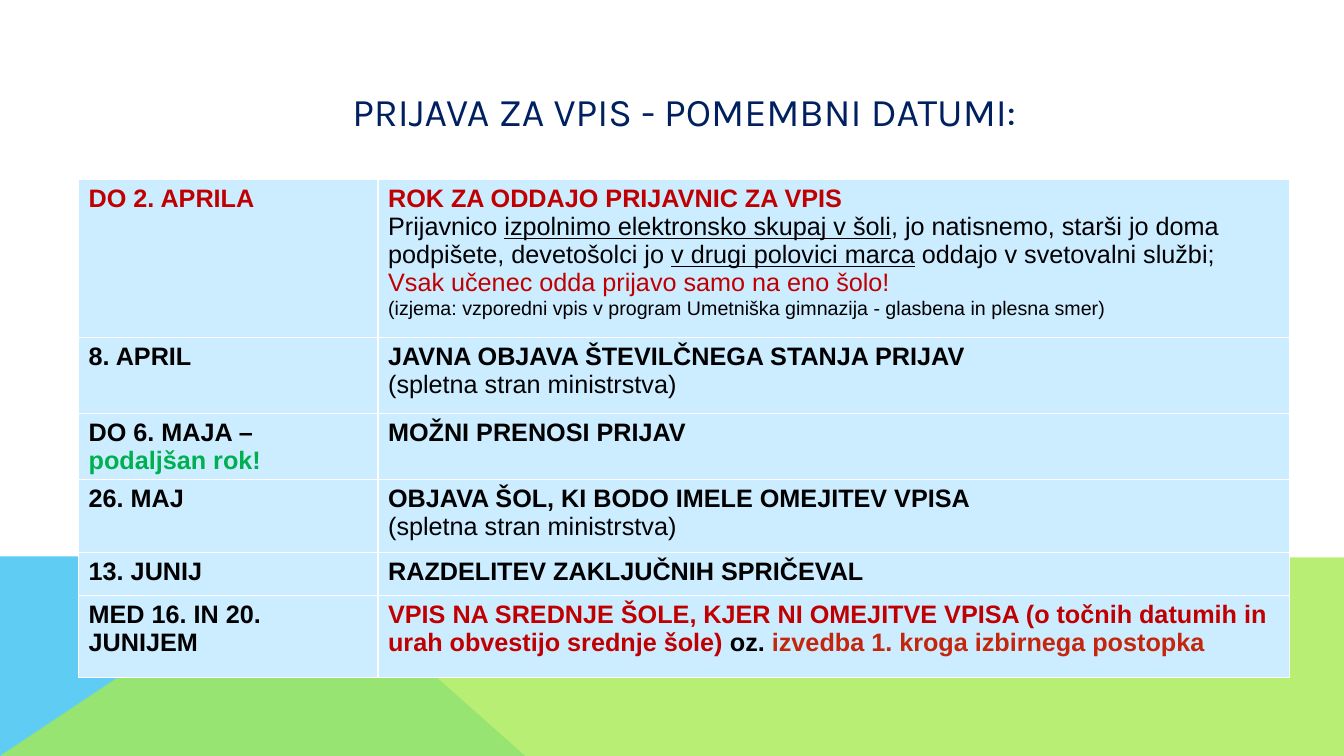
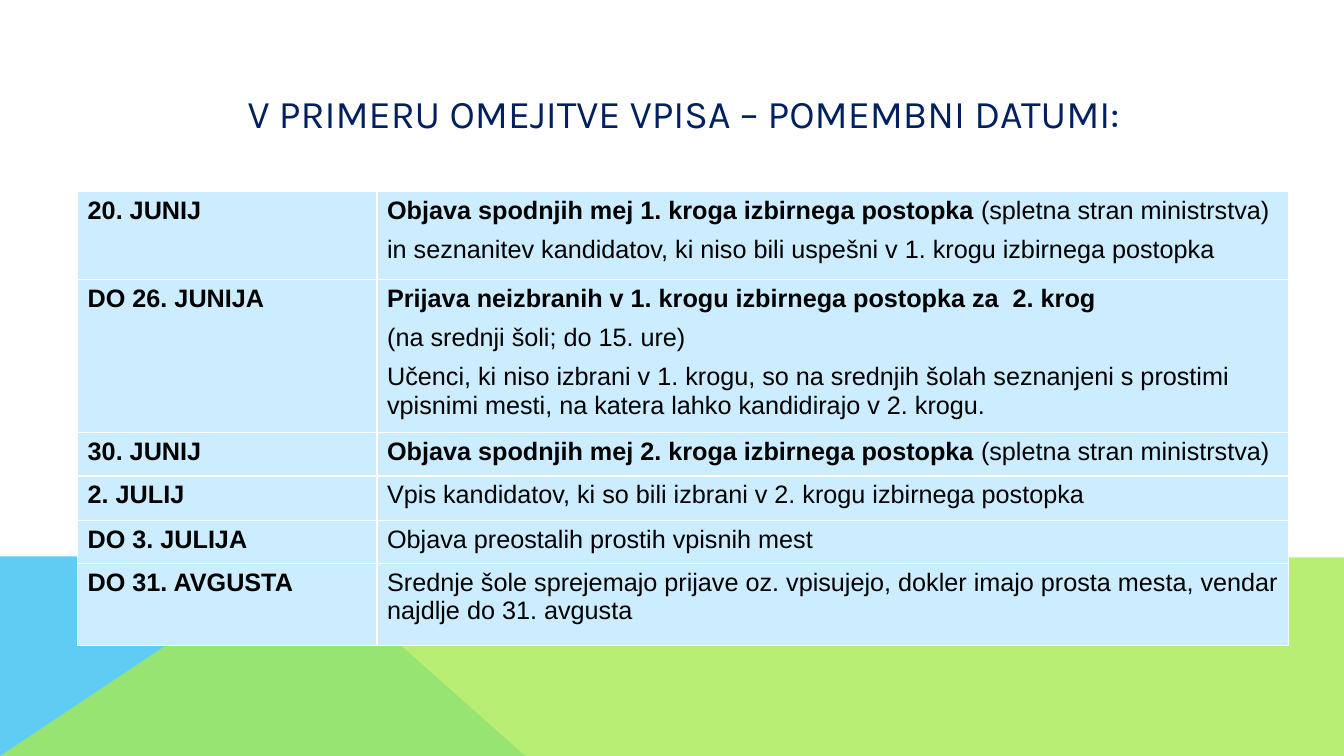
import pptx
import pptx.dml.color
import pptx.enum.text
import pptx.oxml
import pptx.oxml.ns
import pptx.util
from dataclasses import dataclass


@dataclass(frozen=True)
class Theme:
    navy: str = "002060"
    black: str = "000000"
    red: str = "C00000"
    brick: str = "C3260C"
    green: str = "00B050"
    cell: str = "CCECFF"
    border: str = "FFFFFF"
    sky: str = "5ECCF3"
    lime: str = "A7EA52"
    title_font: str = "Karla"
    body_font: str = "Arial"
    title_size: int = 28
    body_size: int = 18
    note_size: int = 14


THEME = Theme()
PX = 9144
SLIDE_SIZE = (1333, 750)
COLUMNS = (297, 904)

PLAIN = {}
BOLD = {"bold": True}
UNDERLINED = {"underline": True}
RED = {"color": THEME.red}
RED_BOLD = {"color": THEME.red, "bold": True}
BRICK_BOLD = {"color": THEME.brick, "bold": True}
GREEN_BOLD = {"color": THEME.green, "bold": True}
NOTE = {"size": THEME.note_size}

BANDS = [
    {"points": [(0, 750), (0, 552), (298, 552), (521, 750)], "color": THEME.sky, "opacity": 100},
    {"points": [(0, 750), (297, 552), (1333, 553), (1333, 750)], "color": THEME.lime, "opacity": 80},
]

MINISTRY = "(spletna stran ministrstva)"

SLIDES = [
    {
        "title": "PRIJAVA ZA VPIS - POMEMBNI DATUMI:",
        "title_box": (182, 31, 993, 157),
        "table_at": (78, 178),
        "gap": 0,
        "rows": [
            (157, [[("DO 2. APRILA", RED_BOLD)]], [
                [("ROK ZA ODDAJO PRIJAVNIC ZA VPIS", RED_BOLD)],
                [
                    ("Prijavnico ", PLAIN),
                    ("izpolnimo elektronsko skupaj v šoli", UNDERLINED),
                    (", jo natisnemo, starši jo doma podpišete, devetošolci jo ", PLAIN),
                    ("v drugi polovici marca", UNDERLINED),
                    (" oddajo v svetovalni službi;", PLAIN),
                ],
                [("Vsak učenec odda prijavo samo na eno šolo!", RED)],
                [("(izjema: vzporedni vpis v program Umetniška gimnazija - glasbena in plesna smer)", NOTE)],
            ]),
            (75, [[("8. APRIL", BOLD)]], [
                [("JAVNA OBJAVA ŠTEVILČNEGA STANJA PRIJAV", BOLD)],
                [(MINISTRY, PLAIN)],
            ]),
            (65, [[("DO 6. MAJA – ", BOLD), ("podaljšan rok!", GREEN_BOLD)]], [
                [("MOŽNI PRENOSI PRIJAV", BOLD)],
            ]),
            (72, [[("26. MAJ", BOLD)]], [
                [("OBJAVA ŠOL, KI BODO IMELE OMEJITEV VPISA", BOLD)],
                [(MINISTRY, PLAIN)],
            ]),
            (43, [[("13. JUNIJ", BOLD)]], [[("RAZDELITEV ZAKLJUČNIH SPRIČEVAL", BOLD)]]),
            (81, [[("MED 16. IN 20.", BOLD)], [("JUNIJEM", BOLD)]], [
                [
                    ("VPIS NA SREDNJE ŠOLE, KJER NI OMEJITVE VPISA "
                     "(o točnih datumih in urah obvestijo srednje šole) ", RED_BOLD),
                    ("oz. ", BOLD),
                    ("izvedba 1. kroga izbirnega postopka", BRICK_BOLD),
                ],
            ]),
        ],
    },
    {
        "title": "V PRIMERU OMEJITVE VPISA – POMEMBNI DATUMI:",
        "title_box": (210, 69, 936, 85),
        "table_at": (77, 190),
        "gap": 8,
        "rows": [
            (87, [[("20. JUNIJ", BOLD)]], [
                [("Objava spodnjih mej 1. kroga izbirnega postopka ", BOLD), (MINISTRY, PLAIN)],
                [("in seznanitev kandidatov, ki niso bili uspešni v 1. krogu izbirnega postopka", PLAIN)],
            ]),
            (144, [[("DO 26. JUNIJA", BOLD)]], [
                [("Prijava neizbranih v 1. krogu izbirnega postopka za  2. krog", BOLD)],
                [("(na srednji šoli; do 15. ure)", PLAIN)],
                [("Učenci, ki niso izbrani v 1. krogu, so na srednjih šolah seznanjeni s prostimi "
                  "vpisnimi mesti, na katera lahko kandidirajo v 2. krogu.", PLAIN)],
            ]),
            (43, [[("30. JUNIJ", BOLD)]], [
                [("Objava spodnjih mej 2. kroga izbirnega postopka ", BOLD), (MINISTRY, PLAIN)],
            ]),
            (44, [[("2. JULIJ", BOLD)]], [
                [("Vpis kandidatov, ki so bili izbrani v 2. krogu izbirnega postopka", PLAIN)],
            ]),
            (43, [[("DO 3. JULIJA", BOLD)]], [[("Objava preostalih prostih vpisnih mest", PLAIN)]]),
            (81, [[("DO 31. AVGUSTA", BOLD)]], [
                [("Srednje šole sprejemajo prijave oz. vpisujejo, dokler imajo prosta mesta, "
                  "vendar najdlje do 31. avgusta", PLAIN)],
            ]),
        ],
    },
]


def rgb(color):
    return pptx.dml.color.RGBColor.from_string(color)


def fill_solid(target, color):
    target.fill.solid()
    target.fill.fore_color.rgb = rgb(color)


def write_text(frame, paragraphs, font=THEME.body_font, size=THEME.body_size,
               color=THEME.black, align=pptx.enum.text.PP_ALIGN.LEFT, gap=0):
    frame.word_wrap = True
    for index, spans in enumerate(paragraphs):
        para = frame.paragraphs[0] if index == 0 else frame.add_paragraph()
        para.alignment = align
        para.space_before = pptx.util.Pt(gap)
        for text, style in spans:
            span = para.add_run()
            span.text = text
            span.font.name = font
            span.font.size = pptx.util.Pt(style.get("size", size))
            span.font.color.rgb = rgb(style.get("color", color))
            span.font.bold = style.get("bold", False)
            span.font.underline = style.get("underline", False)


def add_band(page, points, color, opacity):
    builder = page.shapes.build_freeform(*points[0], scale=PX)
    builder.add_line_segments(points[1:], close=True)
    band = builder.convert_to_shape()
    band.shadow.inherit = False
    fill_solid(band, color)
    band.line.fill.background()
    if opacity < 100:
        tint = band.fill._xPr.find(".//" + pptx.oxml.ns.qn("a:srgbClr"))
        alpha = pptx.oxml.parse_xml(
            f'<a:alpha {pptx.oxml.ns.nsdecls("a")} val="{opacity * 1000}"/>')
        tint.append(alpha)


def add_title(page, text, box):
    title = page.shapes.add_textbox(*(length * PX for length in box))
    title.text_frame.vertical_anchor = pptx.enum.text.MSO_ANCHOR.MIDDLE
    write_text(title.text_frame, [[(text, PLAIN)]], font=THEME.title_font,
               size=THEME.title_size, color=THEME.navy,
               align=pptx.enum.text.PP_ALIGN.CENTER)


def set_borders(cell):
    properties = cell._tc.get_or_add_tcPr()
    for position, side in enumerate(("lnL", "lnR", "lnT", "lnB")):
        border = pptx.oxml.parse_xml(
            f'<a:{side} {pptx.oxml.ns.nsdecls("a")} w="{pptx.util.Pt(1)}">'
            f'<a:solidFill><a:srgbClr val="{THEME.border}"/></a:solidFill></a:{side}>')
        properties.insert(position, border)


def add_dates(page, rows, position, gap):
    left, top = position
    height = sum(row[0] for row in rows)
    frame = page.shapes.add_table(
        len(rows), len(COLUMNS), left * PX, top * PX, sum(COLUMNS) * PX, height * PX)
    table = frame.table
    table.first_row = False
    table.horz_banding = False
    for column, width in zip(table.columns, COLUMNS):
        column.width = width * PX
    for row, (row_height, *contents) in zip(table.rows, rows):
        row.height = row_height * PX
        for cell, paragraphs in zip(row.cells, contents):
            fill_solid(cell, THEME.cell)
            set_borders(cell)
            write_text(cell.text_frame, paragraphs, gap=gap)


def main():
    deck = pptx.Presentation()
    deck.slide_width, deck.slide_height = (length * PX for length in SLIDE_SIZE)
    for content in SLIDES:
        page = deck.slides.add_slide(deck.slide_layouts[6])
        for band in BANDS:
            add_band(page, **band)
        add_dates(page, content["rows"], content["table_at"], content["gap"])
        add_title(page, content["title"], content["title_box"])
    deck.save("out.pptx")


if __name__ == "__main__":
    main()
